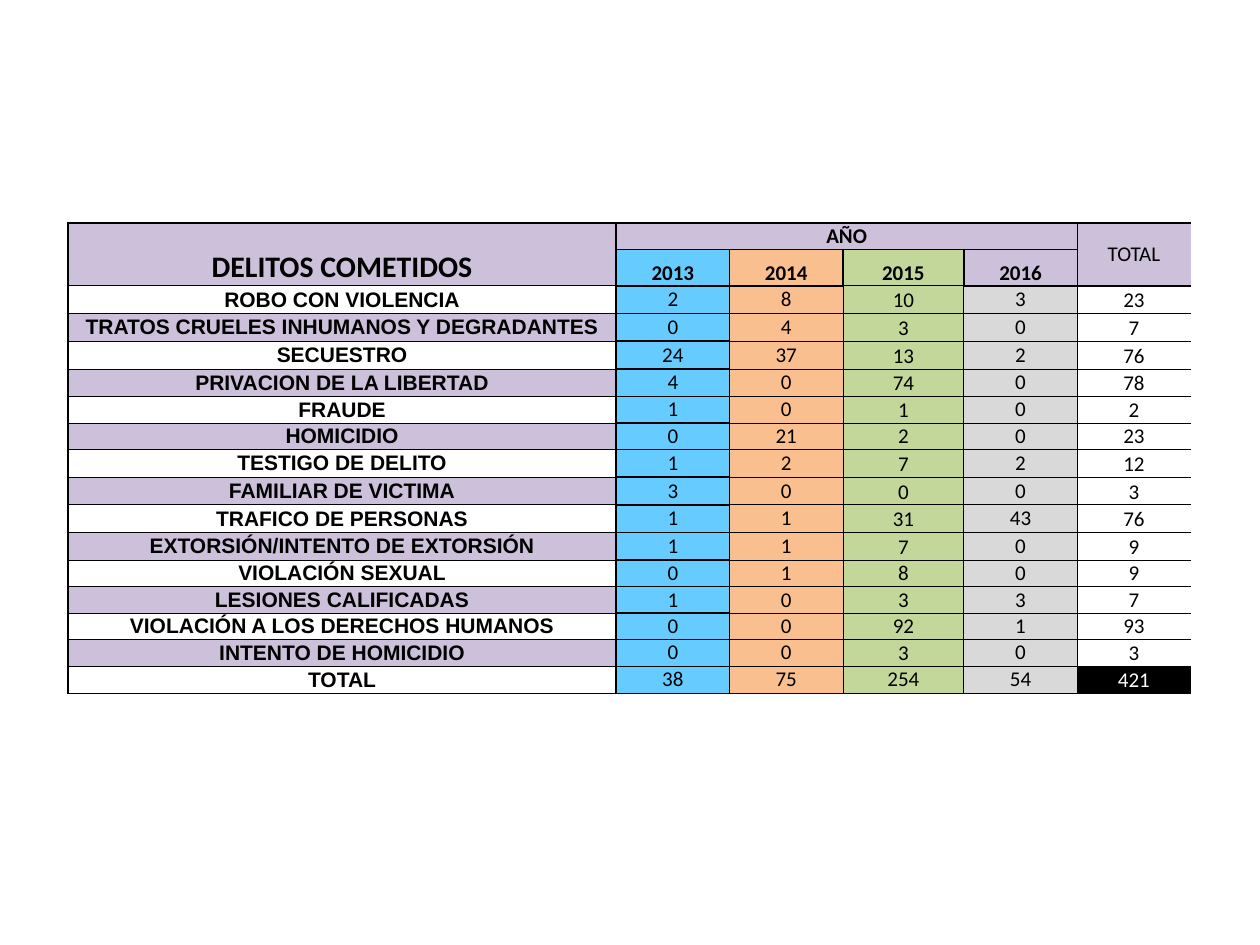
import pptx
import pptx.dml.color
import pptx.enum.text
import pptx.oxml
import pptx.oxml.ns
import pptx.util
from lxml import etree

Inches = pptx.util.Inches
Pt = pptx.util.Pt
RGBColor = pptx.dml.color.RGBColor
MIDDLE = pptx.enum.text.MSO_ANCHOR.MIDDLE
BOTTOM = pptx.enum.text.MSO_ANCHOR.BOTTOM
CENTER = pptx.enum.text.PP_ALIGN.CENTER

BLACK = RGBColor(0x00, 0x00, 0x00)
WHITE = RGBColor(0xFF, 0xFF, 0xFF)
LILAC = RGBColor(0xCC, 0xC0, 0xDA)
BLUE = RGBColor(0x66, 0xCC, 0xFF)
ORANGE = RGBColor(0xFA, 0xBF, 0x8F)
GREEN = RGBColor(0xC4, 0xD7, 0x9B)
GREY = RGBColor(0xD9, 0xD9, 0xD9)

YEARS = ["2013", "2014", "2015", "2016"]
YEAR_FILLS = [BLUE, ORANGE, GREEN, GREY]
CRIMES = [
    ("ROBO CON VIOLENCIA", 2, 8, 10, 3, 23),
    ("TRATOS CRUELES INHUMANOS Y DEGRADANTES", 0, 4, 3, 0, 7),
    ("SECUESTRO", 24, 37, 13, 2, 76),
    ("PRIVACION DE LA LIBERTAD", 4, 0, 74, 0, 78),
    ("FRAUDE", 1, 0, 1, 0, 2),
    ("HOMICIDIO", 0, 21, 2, 0, 23),
    ("TESTIGO DE DELITO", 1, 2, 7, 2, 12),
    ("FAMILIAR DE VICTIMA", 3, 0, 0, 0, 3),
    ("TRAFICO DE PERSONAS", 1, 1, 31, 43, 76),
    ("EXTORSIÓN/INTENTO DE EXTORSIÓN", 1, 1, 7, 0, 9),
    ("VIOLACIÓN SEXUAL", 0, 1, 8, 0, 9),
    ("LESIONES CALIFICADAS", 1, 0, 3, 3, 7),
    ("VIOLACIÓN A LOS DERECHOS HUMANOS", 0, 0, 92, 1, 93),
    ("INTENTO DE HOMICIDIO", 0, 0, 3, 0, 3),
    ("TOTAL", 38, 75, 254, 54, 421),
]
LAST = len(CRIMES) - 1
COLUMN_WIDTHS = [4.35, 0.9, 0.9, 0.96, 0.9, 0.9]
SHORT_ROWS = {0, 1, 6, 7, 12, 13, 14, 15}
SIDES = ["lnL", "lnR", "lnT", "lnB"]


def set_borders(cell, widths):
    properties = cell._tc.get_or_add_tcPr()
    for position, (side, width) in enumerate(zip(SIDES, widths)):
        border = etree.Element(pptx.oxml.ns.qn("a:" + side), w=str(Pt(width)))
        if width:
            fill = etree.SubElement(border, pptx.oxml.ns.qn("a:solidFill"))
            etree.SubElement(fill, pptx.oxml.ns.qn("a:srgbClr"), val=str(BLACK))
        else:
            etree.SubElement(border, pptx.oxml.ns.qn("a:noFill"))
        properties.insert(position, border)


def write_cell(cell, text, fill, borders, anchor=MIDDLE, **font_changes):
    cell.vertical_anchor = anchor
    if fill is None:
        cell.fill.background()
    else:
        cell.fill.solid()
        cell.fill.fore_color.rgb = fill
    set_borders(cell, borders)
    paragraph = cell.text_frame.paragraphs[0]
    paragraph.alignment = CENTER
    run = paragraph.add_run()
    run.text = text
    formats = {"name": "Calibri", "size": Pt(12), "bold": False, **font_changes}
    for attribute, value in formats.items():
        setattr(run.font, attribute, value)
    run.font.color.rgb = WHITE if fill == BLACK else BLACK


def prepare_cells(table):
    margins = dict.fromkeys(
        ["margin_left", "margin_right", "margin_top", "margin_bottom"], Inches(0)
    )
    for cell in table.iter_cells():
        for attribute, value in margins.items():
            setattr(cell, attribute, value)
        if cell.is_spanned:
            paragraph = cell.text_frame.paragraphs[0]._p
            etree.SubElement(paragraph, pptx.oxml.ns.qn("a:endParaRPr"), sz="1200")
            cell.fill.solid()
            cell.fill.fore_color.rgb = LILAC
            set_borders(cell, (1, 1, 1, 1))


def write_header(table):
    table.cell(0, 0).merge(table.cell(1, 0))
    table.cell(0, 1).merge(table.cell(0, 4))
    table.cell(0, 5).merge(table.cell(1, 5))
    prepare_cells(table)
    set_borders(table.cell(1, 5), (1, 0, 1, 1))
    for duplicate in table.cell(1, 5)._tc.tcPr.findall(pptx.oxml.ns.qn("a:lnL"))[1:]:
        for side in SIDES:
            table.cell(1, 5)._tc.tcPr.remove(
                table.cell(1, 5)._tc.tcPr.findall(pptx.oxml.ns.qn("a:" + side))[-1]
            )
    write_cell(table.cell(0, 0), "DELITOS COMETIDOS", LILAC, (1, 1, 1, 0.5),
               BOTTOM, size=Pt(17), bold=True)
    write_cell(table.cell(0, 1), "AÑO", LILAC, (1, 1, 1, 1), BOTTOM, bold=True)
    write_cell(table.cell(0, 5), "TOTAL", LILAC, (1, 0, 1, 1))
    for column, (year, fill) in enumerate(zip(YEARS, [BLUE, ORANGE, GREEN, LILAC]), 1):
        bottom = 0.5 if year == "2015" else 1
        write_cell(table.cell(1, column), year, fill, (1, 1, 1, bottom),
                   BOTTOM, bold=True)


def write_crime(table, index, crime, *counts):
    row = index + 2
    first_top = 1 if index == 0 else 0.5
    write_cell(table.cell(row, 0), crime, LILAC if index % 2 else WHITE,
               (1, 1, 0.5, 1 if index == LAST else 0.5), name="Arial", bold=True)
    *yearly, total = counts
    for column, (count, fill) in enumerate(zip(yearly, YEAR_FILLS), 1):
        borders = (0.5, 0.5, 0.5 if fill == GREEN else first_top, 0.5)
        if fill == BLUE:
            borders = (1, 0.5, 1 if index < 13 else 0.5, 1 if index < 12 else 0.5)
        anchor = BOTTOM if fill == GREEN and index < LAST else MIDDLE
        write_cell(table.cell(row, column), str(count), fill, borders, anchor)
    write_cell(table.cell(row, 5), str(total), BLACK if index == LAST else None,
               (0.5, 0, first_top, 0.5), BOTTOM)


def add_crime_table(slide, left, top, width, height):
    table = slide.shapes.add_table(
        len(CRIMES) + 2, len(COLUMN_WIDTHS), left, top, width, height
    ).table
    table.first_row = False
    table.horz_banding = False
    for column, column_width in zip(table.columns, COLUMN_WIDTHS):
        column.width = Inches(column_width)
    for index, row in enumerate(table.rows):
        row.height = Inches(0.21 if index in SHORT_ROWS else 0.22)
    write_header(table)
    for index, record in enumerate(CRIMES):
        write_crime(table, index, *record)


def main():
    presentation = pptx.Presentation()
    presentation.slide_width = Inches(10)
    presentation.slide_height = Inches(7.5)
    slide = presentation.slides.add_slide(presentation.slide_layouts[6])
    add_crime_table(slide, Inches(0.54), Inches(1.77), Inches(8.92), Inches(3.67))
    presentation.save("out.pptx")


if __name__ == "__main__":
    main()
